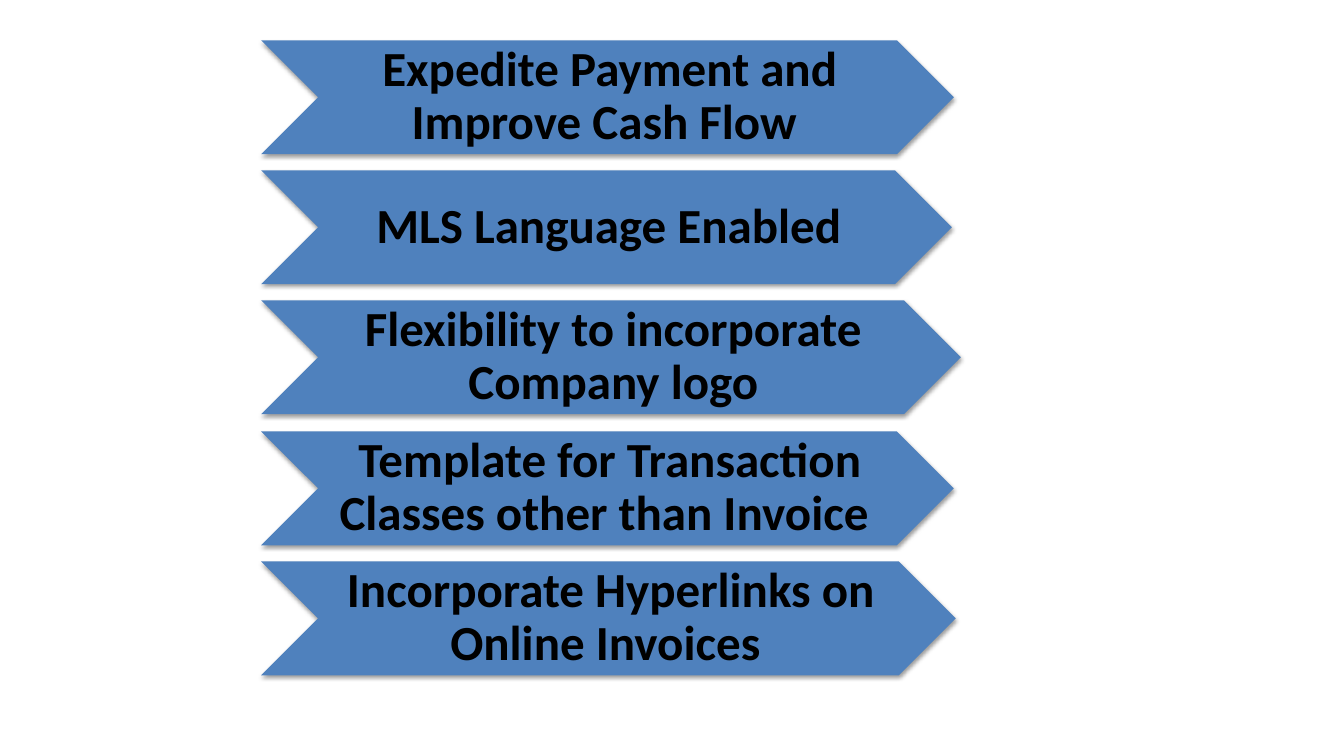
import pptx
import pptx.dml.color
import pptx.enum.shapes
import pptx.enum.text
import pptx.util
from lxml import etree
from pptx.oxml.ns import qn

PX = 9144
BLUE = pptx.dml.color.RGBColor(0x4F, 0x81, 0xBD)
BLACK = pptx.dml.color.RGBColor(0, 0, 0)
LEFT, TOP, HEIGHT, PITCH = 259, 40, 113, 129.25
BENEFITS = [
    ("Expedite Payment and Improve Cash Flow ", 687),
    ("MLS Language Enabled", 685),
    ("Flexibility to incorporate Company logo", 694),
    ("Template for Transaction Classes other than Invoice ", 687),
    ("Incorporate Hyperlinks on Online Invoices ", 689),
]
FRAME_FORMAT = {
    "word_wrap": True,
    "vertical_anchor": pptx.enum.text.MSO_ANCHOR.MIDDLE,
    "margin_left": 5 * PX,
    "margin_top": 2 * PX,
    "margin_right": 0,
    "margin_bottom": 2 * PX,
}
PARAGRAPH_FORMAT = {"alignment": pptx.enum.text.PP_ALIGN.CENTER, "line_spacing": 0.9}
FONT_FORMAT = {"name": "Calibri", "size": pptx.util.Pt(35), "bold": True}


def apply_format(target, values):
    """Set each named attribute on the target."""
    for name, value in values.items():
        setattr(target, name, value)


def add_shadow(shape):
    """Give the shape a soft shadow straight below it."""
    shape.shadow.inherit = False
    effects = shape._element.spPr.find(qn("a:effectLst"))
    shadow = etree.SubElement(effects, qn("a:outerShdw"), blurRad="40000",
                              dist="20000", dir="5400000", rotWithShape="0")
    color = etree.SubElement(shadow, qn("a:srgbClr"), val="000000")
    etree.SubElement(color, qn("a:alpha"), val="38000")


def add_chevron(page, text, top, width):
    """Add one labelled chevron."""
    chevron = page.shapes.add_shape(pptx.enum.shapes.MSO_SHAPE.CHEVRON,
                                    LEFT * PX, top * PX, width * PX, HEIGHT * PX)
    chevron.fill.solid()
    chevron.fill.fore_color.rgb = BLUE
    chevron.line.fill.background()
    add_shadow(chevron)
    frame = chevron.text_frame
    apply_format(frame, FRAME_FORMAT)
    para = frame.paragraphs[0]
    apply_format(para, PARAGRAPH_FORMAT)
    span = para.add_run()
    span.text = text
    apply_format(span.font, FONT_FORMAT)
    span.font.color.rgb = BLACK


def main():
    """Build the slide of stacked benefits."""
    deck = pptx.Presentation()
    deck.slide_width, deck.slide_height = 1333 * PX, 750 * PX
    page = deck.slides.add_slide(deck.slide_layouts[6])
    for index, (text, width) in enumerate(BENEFITS):
        add_chevron(page, text, round(TOP + index * PITCH), width)
    deck.save("out.pptx")


if __name__ == "__main__":
    main()
